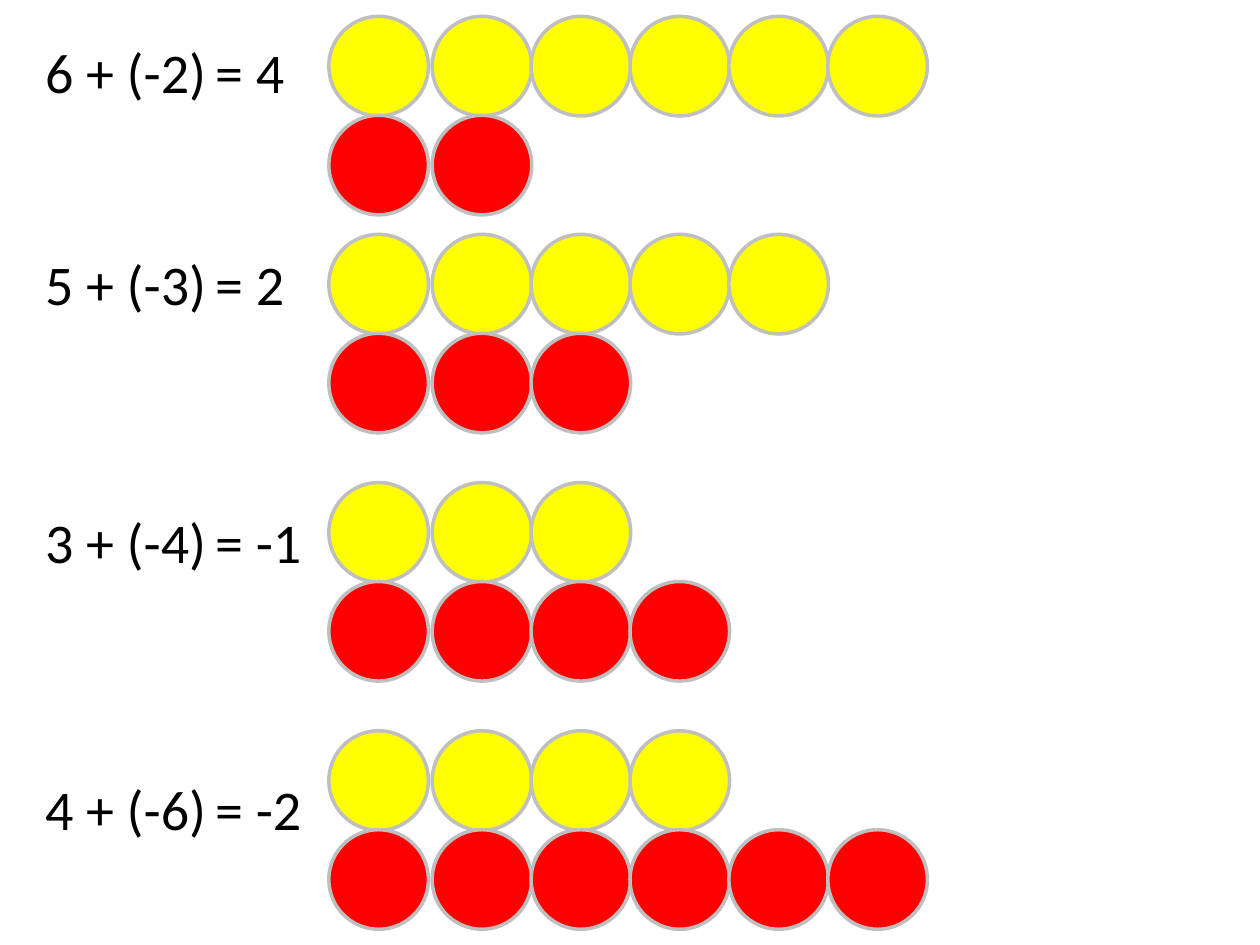
from pptx import Presentation
from pptx.dml.color import RGBColor
from pptx.enum.shapes import MSO_SHAPE as Shape
from pptx.enum.text import MSO_AUTO_SIZE as Fit
from pptx.util import Inches, Pt

BLACK = RGBColor(0x00, 0x00, 0x00)
GRAY = RGBColor(0xBF, 0xBF, 0xBF)
YELLOW = RGBColor(0xFF, 0xFF, 0x00)
RED = RGBColor(0xFF, 0x00, 0x00)

deck = Presentation()
deck.slide_width = Inches(10)
deck.slide_height = Inches(7.5)
slide = deck.slides.add_slide(deck.slide_layouts[6])

SIZE = Inches(0.79)
STEP = Inches(0.785)
COLS = [Inches(2.61)] + [Inches(3.43) + STEP * i for i in range(5)]

sums = [
    (6, 2, 0.25, 0.13),
    (5, 3, 1.93, 1.86),
    (3, 4, 3.98, 3.83),
    (4, 6, 6.1, 5.8),
]

for plus, minus, top, _ in sums:
    parts = [(0.26, f"{plus} + (-{minus})"), (1.61, f"= {plus - minus}")]
    for left, words in parts:
        box = slide.shapes.add_textbox(
            Inches(left), Inches(top), Inches(1.65), Inches(0.64)
        )
        frame = box.text_frame
        frame.word_wrap = True
        frame.auto_size = Fit.SHAPE_TO_FIT_TEXT
        run = frame.paragraphs[0].add_run()
        run.text = words
        run.font.name = "Calibri"
        run.font.size = Pt(32)
        run.font.color.rgb = BLACK

for plus, minus, _, top in sums:
    group = slide.shapes.add_group_shape()
    for row, (count, color) in enumerate([(plus, YELLOW), (minus, RED)]):
        for left in COLS[:count]:
            chip = group.shapes.add_shape(
                Shape.OVAL, left, Inches(top) + STEP * row, SIZE, SIZE
            )
            chip.shadow.inherit = False
            chip.fill.solid()
            chip.fill.fore_color.rgb = color
            chip.line.color.rgb = GRAY
            chip.line.width = Pt(2)

deck.save("out.pptx")
